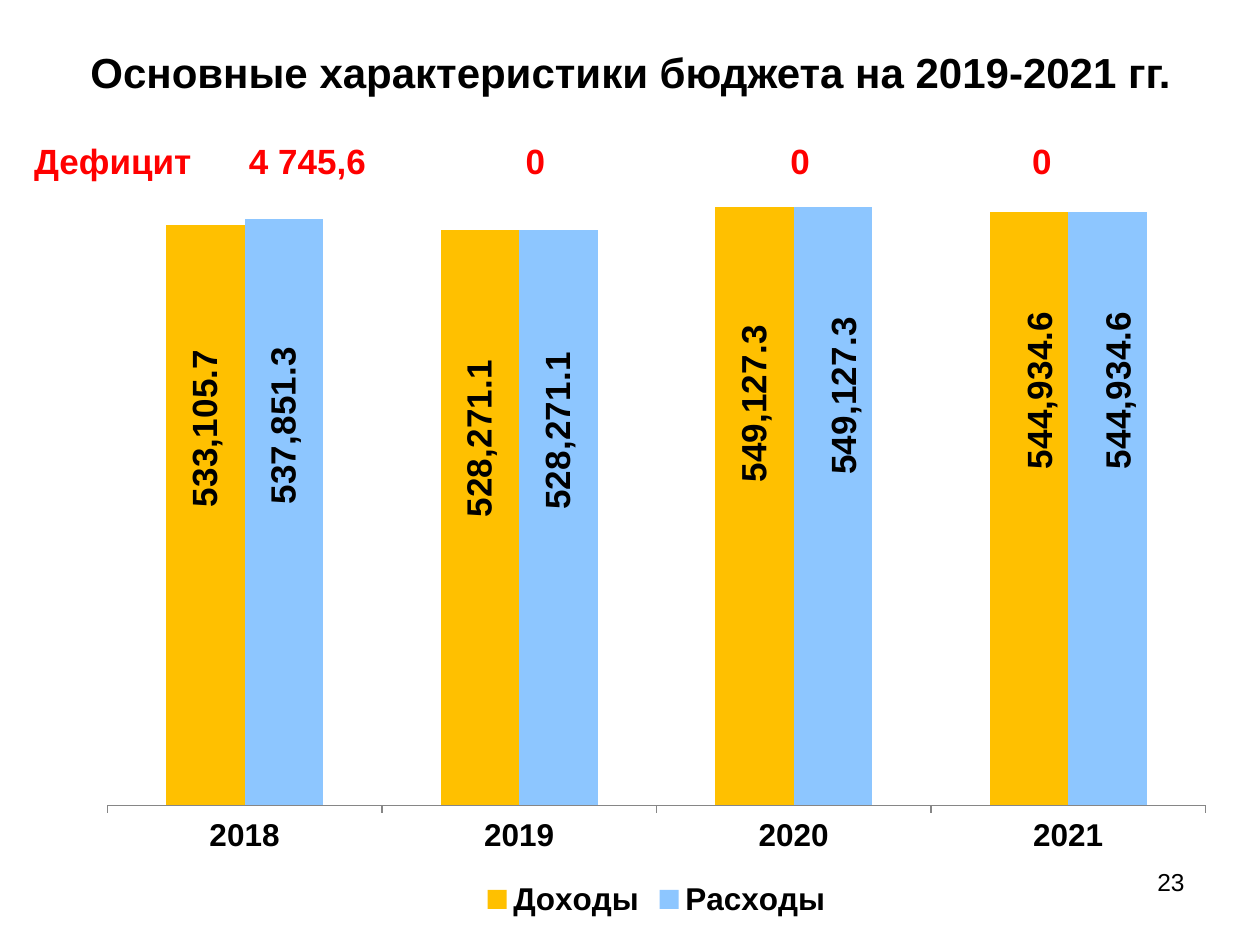
"""Build the budget overview slide with a column chart and a deficit row."""
import lxml.etree
import pptx
import pptx.chart.data
import pptx.dml.color
import pptx.enum.chart
import pptx.enum.text
import pptx.oxml
import pptx.oxml.ns
import pptx.util

Inches = pptx.util.Inches
ALIGN = pptx.enum.text.PP_ALIGN
NUMBER_FORMAT = "#,##0.0"
YEARS = ["2018", "2019", "2020", "2021"]
SERIES = [
    {"name": "Доходы", "color": "FFC000",
     "values": [533105.7, 528271.1, 549127.3, 544934.6],
     "shifts": [(0, -0.11), (0, -0.1), (0, -0.13), (0.01, -0.15)]},
    {"name": "Расходы", "color": "8DC6FF",
     "values": [537851.3, 528271.1, 549127.3, 544934.6],
     "shifts": [(0, -0.11), (0, -0.11), (0.01, -0.14), (0.01, -0.15)]},
]
DEFICIT = ["Дефицит", "4 745,6", "0", "0", "0"]
DEFICIT_WIDTHS = [1.54, 1.46, 2.16, 2.04, 1.8]


def color(value):
    return pptx.dml.color.RGBColor.from_string(value)


def apply(target, values):
    for name, value in values.items():
        setattr(target, name, value)


def manual_layout(inner=False, **sizes):
    """Return a chart layout element with the given fractions."""
    layout = pptx.oxml.parse_xml(
        f"<c:layout {pptx.oxml.ns.nsdecls('c')}><c:manualLayout/></c:layout>")

    def add(name, value):
        tag = pptx.oxml.ns.qn("c:" + name)
        lxml.etree.SubElement(layout[0], tag).set("val", str(value))

    if inner:
        add("layoutTarget", "inner")
        add("xMode", "edge")
        add("yMode", "edge")
    for name, value in sizes.items():
        add(name, value)
    return layout


class SlideBuilder:
    """Holds the text style and the current slide."""

    font_name = "Arial"

    def __init__(self, presentation):
        self.slide = presentation.slides.add_slide(presentation.slide_layouts[5])

    def style(self, font, size, bold=False, text_color="000000"):
        apply(font, {"name": self.font_name, "size": pptx.util.Pt(size), "bold": bold})
        font.color.rgb = color(text_color)

    def fill_text(self, text_frame, text, align, size, **style):
        text_frame.word_wrap = True
        paragraph = text_frame.paragraphs[0]
        paragraph.alignment = align
        run = paragraph.add_run()
        run.text = text
        self.style(run.font, size, **style)

    def title(self, text, left, top, width, height):
        shape = self.slide.shapes.title
        apply(shape, {"left": Inches(left), "top": Inches(top),
                      "width": Inches(width), "height": Inches(height)})
        shape.text_frame.vertical_anchor = pptx.enum.text.MSO_ANCHOR.MIDDLE
        self.fill_text(shape.text_frame, text, ALIGN.CENTER, 24, bold=True)

    def text(self, text, left, top, width, height):
        box = self.slide.shapes.add_textbox(
            Inches(left), Inches(top), Inches(width), Inches(height))
        self.fill_text(box.text_frame, text, ALIGN.RIGHT, 14)

    def chart(self, left, top, width, height):
        data = pptx.chart.data.CategoryChartData(number_format=NUMBER_FORMAT)
        data.categories = YEARS
        for entry in SERIES:
            data.add_series(entry["name"], entry["values"])
        chart = self.slide.shapes.add_chart(
            pptx.enum.chart.XL_CHART_TYPE.COLUMN_CLUSTERED,
            Inches(left), Inches(top), Inches(width), Inches(height), data).chart
        self.style(chart.font, 18)
        apply(chart, {"has_title": False, "has_legend": True})
        apply(chart.legend, {"position": pptx.enum.chart.XL_LEGEND_POSITION.BOTTOM,
                             "include_in_layout": False})
        self.style(chart.legend.font, 18, bold=True)
        apply(chart.value_axis, {"visible": False, "has_major_gridlines": False,
                                 "minimum_scale": 200, "maximum_scale": 600000})
        axis = chart.category_axis
        axis.major_tick_mark = pptx.enum.chart.XL_TICK_MARK.OUTSIDE
        axis.format.line.color.rgb = color("868686")
        self.style(axis.tick_labels.font, 18, bold=True)
        plot = chart.plots[0]
        apply(plot, {"gap_width": 150, "overlap": 0, "vary_by_categories": False})
        for series, entry in zip(plot.series, SERIES):
            series.format.fill.solid()
            series.format.fill.fore_color.rgb = color(entry["color"])
            self.labels(series, entry["shifts"])
        plot_area = chart._chartSpace.chart.plotArea
        for old in plot_area.findall(pptx.oxml.ns.qn("c:layout")):
            plot_area.remove(old)
        plot_area.insert(0, manual_layout(inner=True, x=0.02, y=0.02, w=0.96, h=0.83))

    def labels(self, series, shifts):
        """Turn the value labels upright and shift each one from its bar centre."""
        center = pptx.enum.chart.XL_LABEL_POSITION.CENTER
        labels = series.data_labels
        apply(labels, {"show_value": True, "number_format": NUMBER_FORMAT,
                       "number_format_is_linked": False, "position": center})
        self.style(labels.font, 20, bold=True)
        for index in range(len(shifts)):
            label = series.points[index].data_label
            self.style(label.font, 20, bold=True)
            label.position = center
        for element, (x, y) in zip(labels._element.xpath("c:dLbl"), shifts):
            element.insert(1, manual_layout(x=x, y=y))
            element.insert(2, pptx.oxml.parse_xml(
                f"<c:numFmt {pptx.oxml.ns.nsdecls('c')} "
                f'formatCode="{NUMBER_FORMAT}" sourceLinked="0"/>'))
        for body in labels._element.xpath(".//a:bodyPr"):
            body.set("rot", "-5400000")
            body.set("vert", "horz")

    def table(self, texts, widths, left, top, height):
        frame = self.slide.shapes.add_table(
            1, len(texts), Inches(left), Inches(top), Inches(sum(widths)), Inches(height))
        table = frame.table
        apply(table, {"first_row": False, "horz_banding": False})
        for index, (text, width) in enumerate(zip(texts, widths)):
            table.columns[index].width = Inches(width)
            cell = table.cell(0, index)
            cell.fill.solid()
            cell.fill.fore_color.rgb = color("FFFFFF")
            align = ALIGN.CENTER if index else ALIGN.LEFT
            self.fill_text(cell.text_frame, text, align, 20, bold=True, text_color="FF0000")


def main():
    presentation = pptx.Presentation()
    apply(presentation, {"slide_width": Inches(10), "slide_height": Inches(7.5)})
    builder = SlideBuilder(presentation)
    builder.title("Основные характеристики бюджета на 2019-2021 гг.", 0.17, 0.3, 9.67, 0.53)
    builder.chart(0.67, 1.08, 9.08, 6.25)
    builder.text("23", 7.17, 6.83, 2.33, 0.52)
    builder.table(DEFICIT, DEFICIT_WIDTHS, 0.17, 1.08, 0.42)
    presentation.save("out.pptx")


if __name__ == "__main__":
    main()
